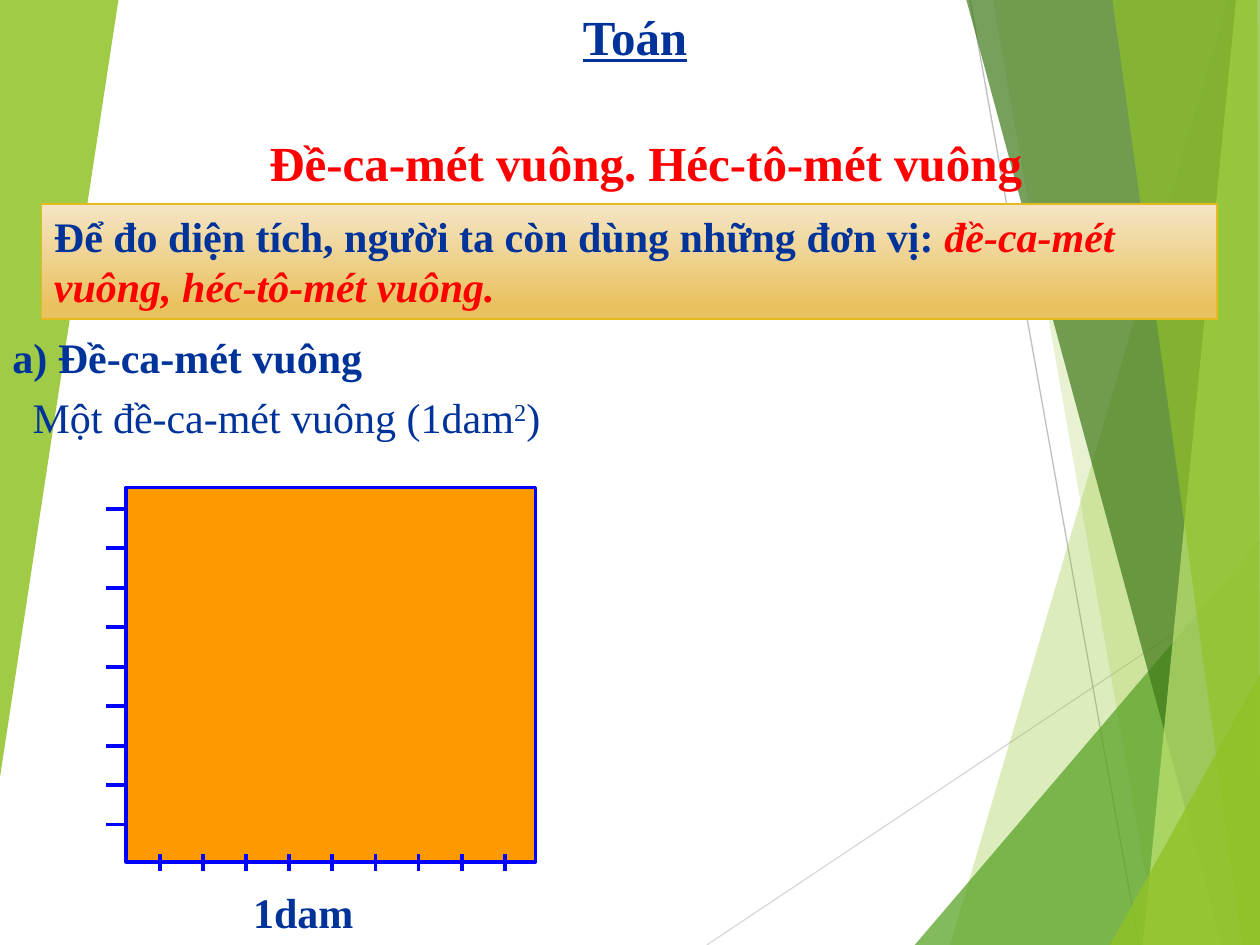
from dataclasses import dataclass

from lxml.etree import SubElement
from pptx import Presentation
from pptx.dml.color import RGBColor
from pptx.enum.shapes import MSO_CONNECTOR as Connector, MSO_SHAPE as Shape
from pptx.enum.text import MSO_ANCHOR as Anchor, MSO_AUTO_SIZE as AutoSize, PP_ALIGN as Align
from pptx.oxml.ns import qn
from pptx.util import Inches, Pt

COLUMNS, ROWS = 100, 75
PAGE_WIDTH, PAGE_HEIGHT = Inches(10), Inches(7.5)
FONT = "Times New Roman"
COLORS = {
    "navy": "003399", "red": "FF0000", "blue": "0000FF", "orange": "FF9900",
    "cream": "F5E5C5", "sand": "E9C260", "gold": "E6B91E",
    "lime": "90C226", "green": "54A021", "forest": "3F7819", "pale": "C0E474",
    "mist": "D9D9D9", "silver": "BFBFBF",
}


@dataclass
class Box:
    left: float
    top: float
    width: float
    height: float

    def inner(self, left, top, width, height):
        return Box(self.left + left, self.top + top, width, height)

    def point(self, column, row):
        return (round((self.left + column) * PAGE_WIDTH / COLUMNS),
                round((self.top + row) * PAGE_HEIGHT / ROWS))

    def frame(self):
        left, top = self.point(0, 0)
        right, bottom = self.point(self.width, self.height)
        return left, top, right - left, bottom - top


def rgb(name):
    return RGBColor.from_string(COLORS[name])


def add_line(page, box, start, end, color, weight):
    line = page.shapes.add_connector(Connector.STRAIGHT, *box.point(*start), *box.point(*end))
    line.line.color.rgb = rgb(color)
    line.line.width = Pt(weight)
    SubElement(line._element.spPr, qn("a:effectLst"))


def add_facet(page, box, corners, color, opacity):
    start, *others = [box.point(*corner) for corner in corners]
    builder = page.shapes.build_freeform(*start)
    builder.add_line_segments(others, close=True)
    facet = builder.convert_to_shape()
    facet.shadow.inherit = False
    facet.line.fill.background()
    facet.fill.solid()
    facet.fill.fore_color.rgb = rgb(color)
    tint = facet._element.spPr.find(".//" + qn("a:srgbClr"))
    SubElement(tint, qn("a:alpha"), val=str(opacity * 1000))


def add_rectangle(page, box, outline, weight):
    panel = page.shapes.add_shape(Shape.RECTANGLE, *box.frame())
    panel.shadow.inherit = False
    panel.line.color.rgb = rgb(outline)
    panel.line.width = Pt(weight)
    return panel


def add_span(para, text, color="navy", size=24, bold=True, italic=False, underline=False):
    span = para.add_run()
    span.text = text
    font = span.font
    font.name, font.size = FONT, Pt(size)
    font.bold, font.italic, font.underline = bold, italic, underline
    font.color.rgb = rgb(color)
    return span


def start_text(shape, align=Align.LEFT):
    frame = shape.text_frame
    frame.word_wrap = True
    frame.auto_size = AutoSize.SHAPE_TO_FIT_TEXT
    frame.vertical_anchor = Anchor.TOP
    para = frame.paragraphs[0]
    para.alignment = align
    return para


def add_label(page, box, align=Align.LEFT):
    return start_text(page.shapes.add_textbox(*box.frame()), align)


def draw_backdrop(page, box):
    right, bottom = box.width, box.height
    add_line(page, box, (56.1, bottom), (right, 45.7), "mist", 0.75)
    add_line(page, box, (77, 0), (90.4, bottom), "silver", 0.75)
    facets = [
        ([(97.5, 0), (75.4, bottom), (right, bottom), (right, 0)], "lime", 30),
        ([(78.8, 0), (91.9, bottom), (right, bottom), (right, 0)], "lime", 20),
        ([(72.6, bottom), (right, 42.9), (right, bottom)], "green", 72),
        ([(76.7, 0), (97, bottom), (right, bottom), (right, 0)], "forest", 70),
        ([(98.1, 0), (90.7, bottom), (right, bottom), (right, 0)], "pale", 70),
        ([(88.3, 0), (98.6, bottom), (right, bottom), (99.8, 0)], "lime", 65),
        ([(88.1, bottom), (right, 53.5), (right, bottom)], "lime", 80),
        ([(0, 0), (9.4, 0), (0, 61.7)], "lime", 85),
    ]
    for corners, color, opacity in facets:
        add_facet(page, box, corners, color, opacity)


def draw_heading(page, box):
    subject = add_label(page, box.inner(7.5, 0, 65.8, 5.7), Align.CENTER)
    add_span(subject, "Toán", size=28, underline=True)
    lesson = add_label(page, box.inner(0, 10, box.width, 5.7), Align.CENTER)
    add_span(lesson, "Đề-ca-mét vuông. Héc-tô-mét vuông", "red", 28)


def draw_banner(page, box):
    panel = add_rectangle(page, box, "gold", 1)
    panel.fill.gradient()
    panel.fill.gradient_angle = 270
    stops = zip(panel.fill.gradient_stops, ("cream", "sand"), (0, 0.88))
    for stop, color, position in stops:
        stop.color.rgb = rgb(color)
        stop.position = position
    para = start_text(panel)
    add_span(para, "Để đo diện tích, người ta còn dùng những đơn vị: ")
    add_span(para, "đề-ca-mét vuông, héc-tô-mét vuông.", "red", italic=True)


def draw_definition(page, box):
    add_span(add_label(page, box.inner(0, 0, 40, 5.1)), "a) Đề-ca-mét vuông")
    para = add_label(page, box.inner(1.6, 4.2, 45.8, 10.4))
    para.line_spacing = 1.15
    para.space_after = Pt(10)
    add_span(para, "Một đề-ca-mét vuông (1dam", bold=False)
    power = add_span(para, "2", bold=False)
    power._r.get_or_add_rPr().set("baseline", "30000")
    add_span(para, ")", bold=False)


def draw_square(page, box, ticks=9):
    square = add_rectangle(page, box, "blue", 2)
    square.fill.solid()
    square.fill.fore_color.rgb = rgb("orange")
    column_step, row_step = 3.42, 3.13
    for tick in range(ticks):
        column, row = 2.7 + tick * column_step, 1.7 + tick * row_step
        add_line(page, box, (column, box.height - 0.6), (column, box.height + 0.7), "blue", 2.25)
        add_line(page, box, (-0.1, row), (-1.6, row), "blue", 2.25)
    add_span(add_label(page, box.inner(9.1, 31.2, 10.8, 5.1)), "1dam")


def main():
    deck = Presentation()
    deck.slide_width, deck.slide_height = PAGE_WIDTH, PAGE_HEIGHT
    page = deck.slides.add_slide(deck.slide_layouts[6])
    draw_backdrop(page, Box(0, 0, COLUMNS, ROWS))
    draw_heading(page, Box(10, 0, 82.5, 15.7))
    draw_definition(page, Box(0, 25.8, 47.4, 14.6))
    draw_square(page, Box(10, 38.7, 32.5, 29.7))
    draw_banner(page, Box(3.3, 16.2, 93.3, 9.1))
    deck.save("out.pptx")


if __name__ == "__main__":
    main()
